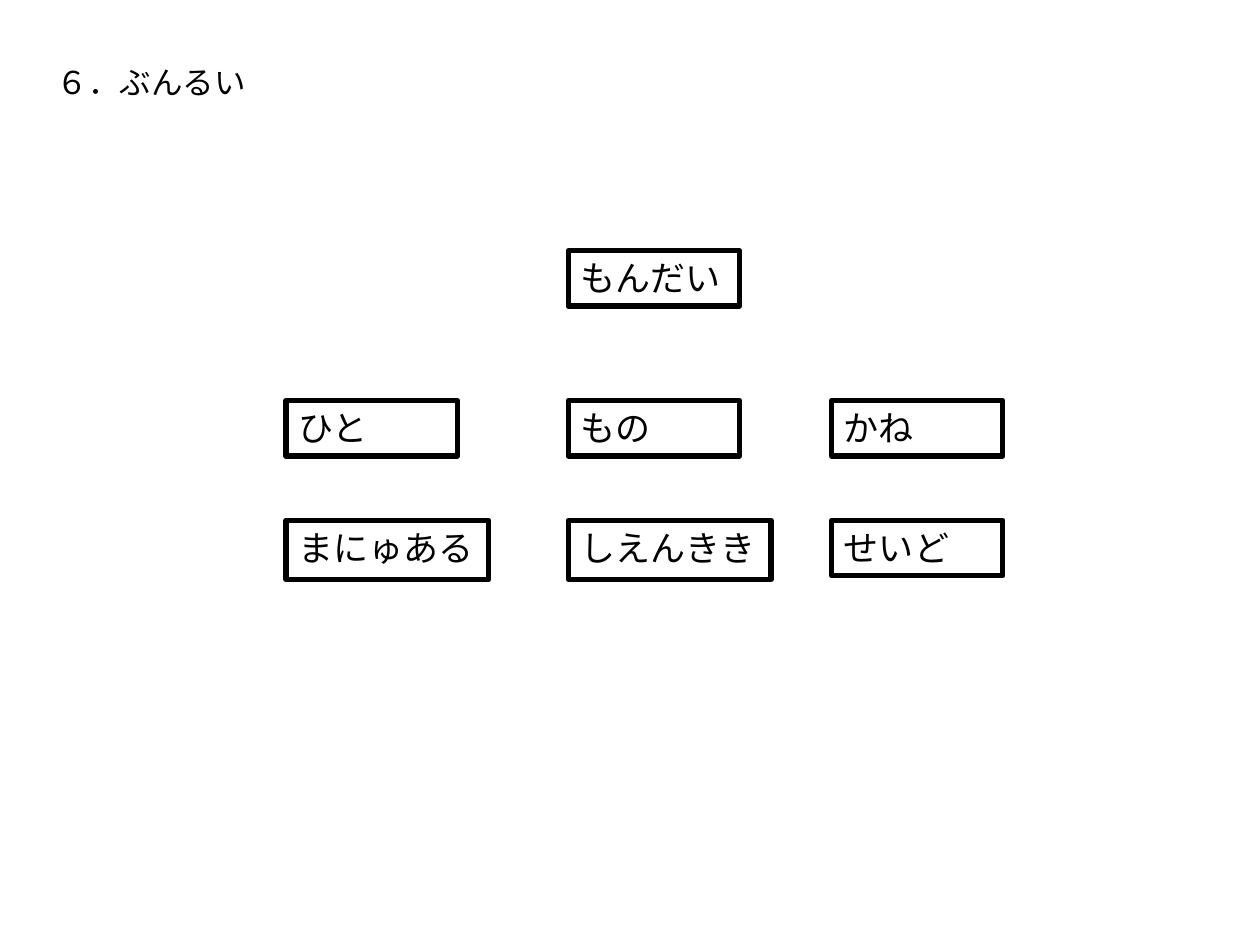
from pptx import Presentation
from pptx.dml.color import RGBColor
from pptx.enum.shapes import MSO_SHAPE as Shape
from pptx.enum.text import MSO_ANCHOR as Anchor, MSO_AUTO_SIZE as AutoSize, PP_ALIGN as Align
from pptx.util import Inches, Pt

BLACK = RGBColor(0, 0, 0)
COLUMNS = (2.27, 4.51, 6.6)
PROBLEM_TOP, RESOURCE_TOP, MEASURE_TOP = 1.99, 3.18, 4.13
NORMAL_BOX = (1.36, 0.44)
WIDE_BOX = (1.61, 0.47)


class SlideBuilder:
    font = "Calibri"
    color = BLACK
    title_size = 18
    box_size = 20
    border = 3

    def __init__(self, deck):
        self.page = deck.slides.add_slide(deck.slide_layouts[5])

    def add_text(self, shape, text, size):
        frame = shape.text_frame
        frame.word_wrap = True
        frame.auto_size = AutoSize.SHAPE_TO_FIT_TEXT
        frame.vertical_anchor = Anchor.TOP
        para = frame.paragraphs[0]
        para.alignment = Align.LEFT
        span = para.add_run()
        span.text = text
        span.font.name = self.font
        span.font.size = Pt(size)
        span.font.color.rgb = self.color

    def title(self, text, left, top, width, height):
        title = self.page.shapes.title
        title.left, title.top = Inches(left), Inches(top)
        title.width, title.height = Inches(width), Inches(height)
        self.add_text(title, text, self.title_size)

    def box(self, text, left, top, size=NORMAL_BOX):
        width, height = size
        box = self.page.shapes.add_shape(
            Shape.RECTANGLE, Inches(left), Inches(top), Inches(width), Inches(height))
        box.shadow.inherit = False
        box.fill.background()
        box.line.color.rgb = self.color
        box.line.width = Pt(self.border)
        self.add_text(box, text, self.box_size)


def main():
    deck = Presentation()
    deck.slide_width, deck.slide_height = Inches(10), Inches(7.5)
    slide = SlideBuilder(deck)
    slide.title("６．ぶんるい", 0.35, 0.45, 1.92, 0.4)
    slide.box("もんだい", COLUMNS[1], PROBLEM_TOP)
    for left, resource in zip(COLUMNS, ("ひと", "もの", "かね")):
        slide.box(resource, left, RESOURCE_TOP)
    measures = (("まにゅある", WIDE_BOX), ("しえんきき", WIDE_BOX), ("せいど", NORMAL_BOX))
    for left, (measure, size) in zip(COLUMNS, measures):
        slide.box(measure, left, MEASURE_TOP, size)
    deck.save("out.pptx")


if __name__ == "__main__":
    main()
